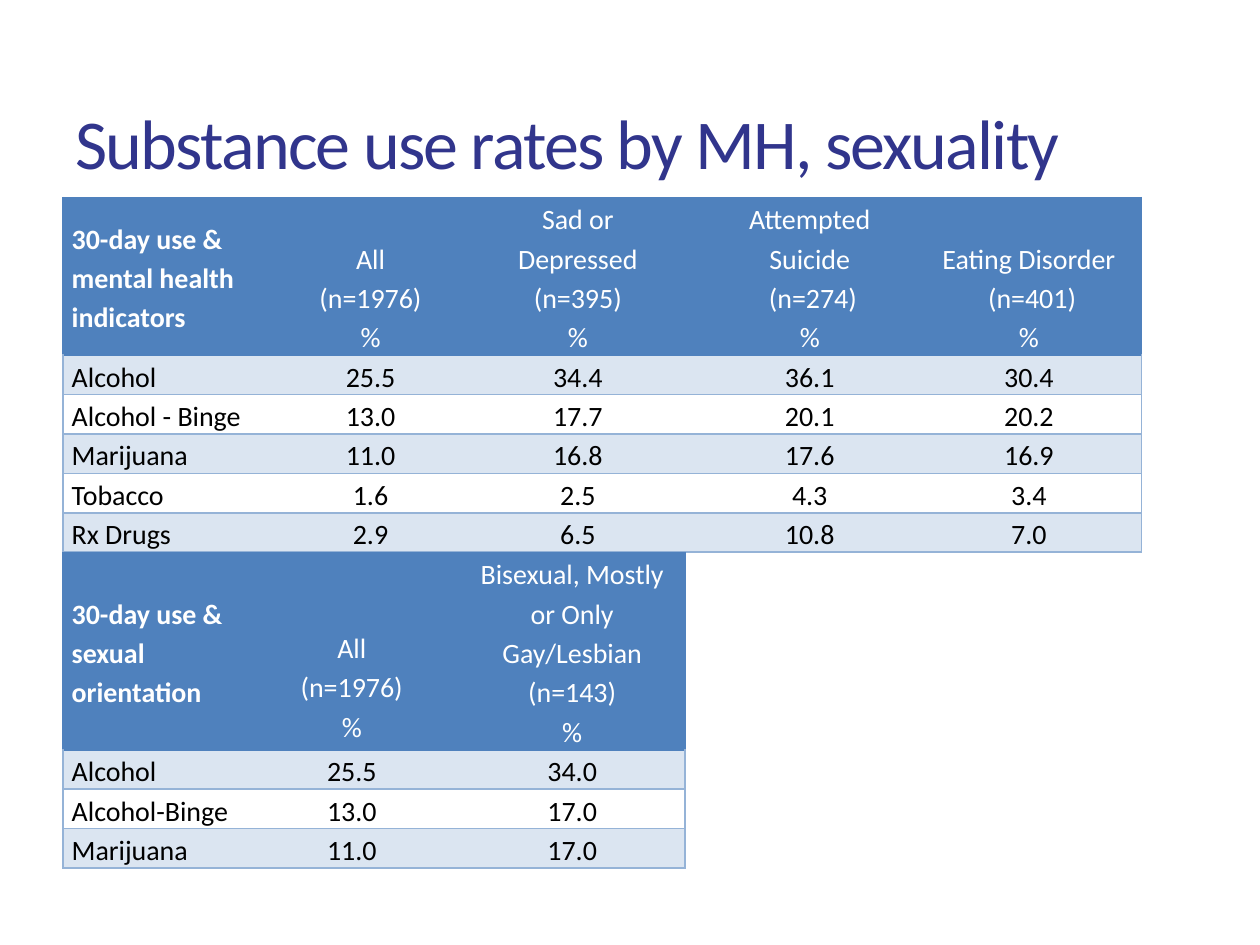
from lxml import etree
from pptx import Presentation
from pptx.dml.color import RGBColor
from pptx.enum.text import MSO_ANCHOR, PP_ALIGN
from pptx.oxml.ns import qn
from pptx.util import Pt

FONT = "Calibri"
INDIGO = RGBColor(0x31, 0x35, 0x8C)
WHITE = RGBColor(0xFF, 0xFF, 0xFF)
BLACK = RGBColor(0, 0, 0)
BLUE = RGBColor(0x4F, 0x81, 0xBD)
RULE = RGBColor(0x95, 0xB3, 0xD7)
BAND = RGBColor(0xDB, 0xE5, 0xF1)

TITLE = "Substance use rates by MH, sexuality"
LEFT, ROW_H = 36, 22.5
TABLES = [
    {
        "top": 113, "head_h": 90, "widths": [129, 93.5, 143.5, 121.5, 129], "lifts": {},
        "head": [
            ["30-day use & mental health indicators"],
            ["All", "(n=1976)", "%"],
            ["Sad or", "Depressed", "(n=395)", "%"],
            ["Attempted Suicide", " (n=274)", "%"],
            ["Eating Disorder", " (n=401)", "%"],
        ],
        "body": [
            ["Alcohol", "25.5", "34.4", "36.1", "30.4"],
            ["Alcohol - Binge", "13.0", "17.7", "20.1", "20.2"],
            ["Marijuana", "11.0", "16.8", "17.6", "16.9"],
            ["Tobacco", "1.6", "2.5", "4.3", "3.4"],
            ["Rx Drugs", "2.9", "6.5", "10.8", "7.0"],
        ],
    },
    {
        "top": 316, "head_h": 112.5, "widths": [103.5, 123, 129], "lifts": {1: 3},
        "head": [
            ["30-day use & sexual orientation"],
            ["All", "(n=1976)", "%"],
            ["Bisexual, Mostly or Only Gay/Lesbian", "(n=143)", "%"],
        ],
        "body": [
            ["Alcohol", "25.5", "34.0"],
            ["Alcohol-Binge", "13.0", "17.0"],
            ["Marijuana", "11.0", "17.0"],
        ],
    },
]


def add_run(p, words, size, color, bold=False):
    r = p.add_run()
    r.text = words
    r.font.name, r.font.size, r.font.bold = FONT, Pt(size), bold
    r.font.color.rgb = color
    return r


def set_borders(cell, colors):
    tcPr = cell._tc.get_or_add_tcPr()
    for side, color in zip("LRTB", colors):
        ln = etree.SubElement(tcPr, qn(f"a:ln{side}"), w=str(Pt(1)))
        if color is None:
            etree.SubElement(ln, qn("a:noFill"))
        else:
            fill = etree.SubElement(ln, qn("a:solidFill"))
            etree.SubElement(fill, qn("a:srgbClr"), val=str(color))


def fill_cell(cell, lines, row, col, last, lift):
    head = row == 0
    edge = BLUE if head else RULE
    set_borders(cell, (edge if col == 0 else None, edge if col == last else None,
                       BLUE if row < 2 else RULE, edge))
    if head or row % 2:
        cell.fill.solid()
        cell.fill.fore_color.rgb = BLUE if head else BAND
    else:
        cell.fill.background()
    cell.margin_left = cell.margin_right = Pt(5)
    cell.margin_top, cell.margin_bottom = Pt(0), Pt(lift)
    if head:
        cell.vertical_anchor = MSO_ANCHOR.BOTTOM if col else MSO_ANCHOR.MIDDLE
    tf = cell.text_frame
    for i, line in enumerate(lines):
        p = tf.add_paragraph() if i else tf.paragraphs[0]
        p.alignment = PP_ALIGN.CENTER if col else PP_ALIGN.LEFT
        p.line_spacing = 1.15
        add_run(p, line, 16, WHITE if head else BLACK, head and col == 0)


def add_rates(s, data):
    rows = [data["head"]] + [[[words] for words in row] for row in data["body"]]
    widths = data["widths"]
    heights = [data["head_h"]] + [ROW_H] * len(data["body"])
    tbl = s.shapes.add_table(len(rows), len(widths), Pt(LEFT), Pt(data["top"]),
                             Pt(sum(widths)), Pt(sum(heights))).table
    tbl.horz_banding = False
    for column, width in zip(tbl.columns, widths):
        column.width = Pt(width)
    for row, (cells, height) in enumerate(zip(rows, heights)):
        tbl.rows[row].height = Pt(height)
        for col, lines in enumerate(cells):
            lift = data["lifts"].get(col, 0) if row == 0 else 0
            fill_cell(tbl.cell(row, col), lines, row, col, len(widths) - 1, lift)


def main():
    prs = Presentation()
    prs.slide_width, prs.slide_height = Pt(720), Pt(540)
    s = prs.slides.add_slide(prs.slide_layouts[5])
    sp = s.shapes.title
    sp.left, sp.top, sp.width, sp.height = Pt(36), Pt(42), Pt(648), Pt(78)
    tf = sp.text_frame
    tf.word_wrap = True
    tf.vertical_anchor = MSO_ANCHOR.MIDDLE
    p = tf.paragraphs[0]
    p.alignment = PP_ALIGN.LEFT
    r = add_run(p, TITLE, 40, INDIGO)
    r.font._element.set("spc", "-100")
    for data in TABLES:
        add_rates(s, data)
    prs.save("out.pptx")


if __name__ == "__main__":
    main()
